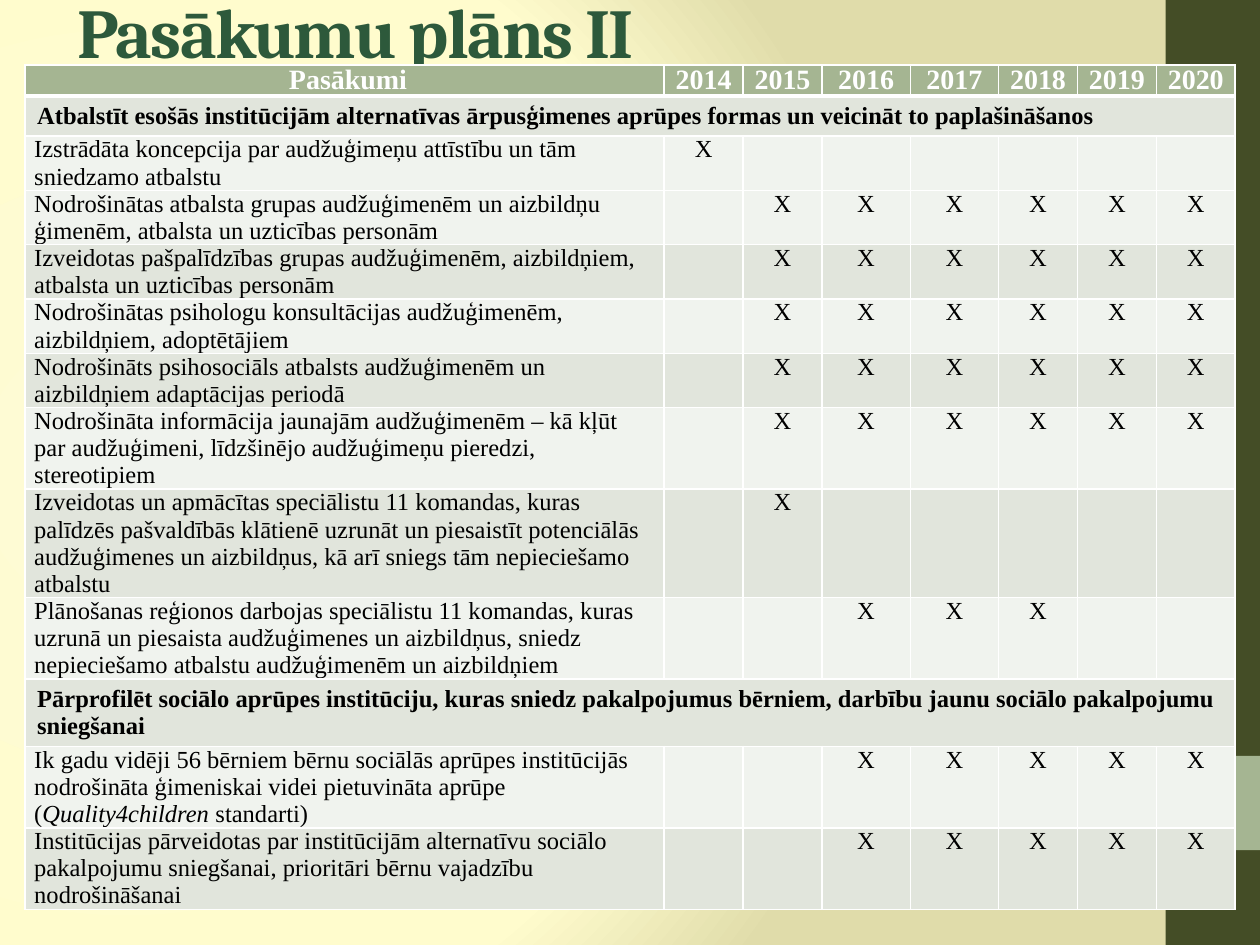
from dataclasses import dataclass

from pptx import Presentation
from pptx import util as u
from pptx.dml.color import RGBColor
from pptx.enum import shapes, text
from pptx.oxml import parse_xml
from pptx.oxml.ns import nsdecls


@dataclass(frozen=True)
class Theme:
    olive: str = "444D26"
    sage: str = "A5B592"
    title: str = "2D593B"
    band_dark: str = "E1E5DC"
    band_light: str = "F0F3EE"
    white: str = "FFFFFF"
    black: str = "000000"
    gradient: tuple = ((0, "FEFBD4"), (75, "FFFCCD"), (100, "E0DCAA"))
    title_font: str = "Cambria"
    table_font: str = "Times New Roman"
    title_size: int = 40
    header_size: int = 16
    body_size: int = 14
    line_pitch: float = 1.107  # line height as a share of the type size


@dataclass(frozen=True)
class Section:
    name: str
    lines: int = 1


@dataclass(frozen=True)
class Activity:
    name: str  # asterisks enclose italic words
    lines: int
    first_year: int
    last_year: int
    shaded: bool = False


THEME = Theme()
YEARS = range(2014, 2021)
COLUMN_WIDTHS = [12.89, 1.59, 1.59, 1.78, 1.78, 1.59, 1.59, 1.59]
LINE_HEIGHT = 0.545
HEADER_HEIGHT = 0.62
SECTION_MARGINS = (0.25, 0.13)
CELL_MARGINS = (0.19, 0)

PLAN = [
    Section("Atbalstīt esošās institūcijām alternatīvas ārpusģimenes aprūpes formas "
            "un veicināt to paplašināšanos"),
    Activity("Izstrādāta koncepcija par audžuģimeņu attīstību un tām sniedzamo atbalstu",
             2, 2014, 2014),
    Activity("Nodrošinātas atbalsta grupas audžuģimenēm un aizbildņu ģimenēm, "
             "atbalsta un uzticības personām", 2, 2015, 2020),
    Activity("Izveidotas pašpalīdzības grupas audžuģimenēm, aizbildņiem, "
             "atbalsta un uzticības personām", 2, 2015, 2020, True),
    Activity("Nodrošinātas psihologu konsultācijas audžuģimenēm, aizbildņiem, adoptētājiem",
             2, 2015, 2020),
    Activity("Nodrošināts psihosociāls atbalsts audžuģimenēm un aizbildņiem "
             "adaptācijas periodā", 2, 2015, 2020, True),
    Activity("Nodrošināta informācija jaunajām audžuģimenēm – kā kļūt par audžuģimeni, "
             "līdzšinējo audžuģimeņu pieredzi, stereotipiem", 3, 2015, 2020),
    Activity("Izveidotas un apmācītas speciālistu 11 komandas, kuras palīdzēs pašvaldībās "
             "klātienē uzrunāt un piesaistīt potenciālās audžuģimenes un aizbildņus, "
             "kā arī sniegs tām nepieciešamo atbalstu", 4, 2015, 2015, True),
    Activity("Plānošanas reģionos darbojas speciālistu 11 komandas, kuras uzrunā un "
             "piesaista audžuģimenes un aizbildņus, sniedz nepieciešamo atbalstu "
             "audžuģimenēm un aizbildņiem", 3, 2016, 2018),
    Section("Pārprofilēt sociālo aprūpes institūciju, kuras sniedz pakalpojumus bērniem, "
            "darbību jaunu sociālo pakalpojumu sniegšanai", 2),
    Activity("Ik gadu vidēji 56 bērniem bērnu sociālās aprūpes institūcijās nodrošināta "
             "ģimeniskai videi pietuvināta aprūpe (*Quality4children* standarti)",
             3, 2016, 2020),
    Activity("Institūcijas pārveidotas par institūcijām alternatīvu sociālo pakalpojumu "
             "sniegšanai, prioritāri bērnu vajadzību nodrošināšanai", 3, 2016, 2020, True),
]


def rgb(color: str) -> RGBColor:
    return RGBColor.from_string(color)


def set_background(slide) -> None:
    stops = "".join(f'<a:gs pos="{position * 1000}"><a:srgbClr val="{color}"/></a:gs>'
                    for position, color in THEME.gradient)
    slide.element.cSld.insert(0, parse_xml(
        f'<p:bg {nsdecls("p", "a")}><p:bgPr><a:gradFill rotWithShape="1">'
        f'<a:gsLst>{stops}</a:gsLst><a:path path="circle">'
        '<a:fillToRect l="20000" t="50000" r="100000" b="50000"/></a:path>'
        '</a:gradFill><a:effectLst/></p:bgPr></p:bg>'))


def add_band(slide, top: float, height: float, color: str) -> None:
    shape = slide.shapes.add_shape(shapes.MSO_SHAPE.RECTANGLE, u.Cm(23.5), u.Cm(top),
                                   u.Cm(1.9), u.Cm(height))
    shape.shadow.inherit = False
    shape.fill.solid()
    shape.fill.fore_color.rgb = rgb(color)
    shape.line.fill.background()


def style_font(font, name: str, size: int, color: str, bold: bool) -> None:
    font.name, font.size, font.bold = name, u.Pt(size), bold
    font.color.rgb = rgb(color)


def add_title(slide, title: str) -> None:
    box = slide.shapes.add_textbox(u.Cm(1.32), u.Cm(0.12), u.Cm(21.16), u.Cm(1))
    frame = box.text_frame
    frame.word_wrap = True
    frame.vertical_anchor = text.MSO_ANCHOR.MIDDLE
    paragraph = frame.paragraphs[0]
    run = paragraph.add_run()
    run.text = title
    style_font(paragraph.font, THEME.title_font, THEME.title_size, THEME.title, True)
    run.font._element.set("spc", "-100")


def set_borders(cell, top: int = 1, bottom: int = 1) -> None:
    properties = cell._tc.get_or_add_tcPr()
    widths = {"lnL": 1, "lnR": 1, "lnT": top, "lnB": bottom}
    for index, (side, width) in enumerate(widths.items()):
        properties.insert(index, parse_xml(
            f'<a:{side} {nsdecls("a")} w="{u.Pt(width)}"><a:solidFill>'
            f'<a:srgbClr val="{THEME.white}"/></a:solidFill></a:{side}>'))


def fill_cell(cell, words: str, fill: str, size: int = THEME.body_size,
              color: str = THEME.black, bold: bool = False, centred: bool = False,
              margins: tuple = CELL_MARGINS) -> None:
    cell.fill.solid()
    cell.fill.fore_color.rgb = rgb(fill)
    cell.margin_left = cell.margin_right = u.Cm(margins[0])
    cell.margin_top = cell.margin_bottom = u.Cm(margins[1])
    paragraph = cell.text_frame.paragraphs[0]
    style_font(paragraph.font, THEME.table_font, size, color, bold)
    paragraph.line_spacing = u.Pt(round(size * THEME.line_pitch, 1))
    if centred:
        paragraph.alignment = text.PP_ALIGN.CENTER
    for index, part in enumerate(words.split("*") if words else []):
        run = paragraph.add_run()
        run.text = part
        if index % 2:
            run.font.italic = True
    # The paragraph end takes the same size, so that it does not stretch the row
    paragraph._p.append(parse_xml(f'<a:endParaRPr {nsdecls("a")} sz="{size * 100}"/>'))


def add_plan_table(slide) -> None:
    heights = [HEADER_HEIGHT] + [
        row.lines * LINE_HEIGHT + (2 * SECTION_MARGINS[1] if isinstance(row, Section) else 0)
        for row in PLAN]
    table = slide.shapes.add_table(len(heights), len(COLUMN_WIDTHS), u.Cm(0.5), u.Cm(1.31),
                                   u.Cm(sum(COLUMN_WIDTHS)), u.Cm(sum(heights))).table
    for column, width in zip(table.columns, COLUMN_WIDTHS):
        column.width = u.Cm(width)
    for row, height in zip(table.rows, heights):
        row.height = u.Cm(height)

    # Header row
    for cell, label in zip(table.rows[0].cells, [" Pasākumi", *map(str, YEARS)]):
        fill_cell(cell, label, THEME.sage, THEME.header_size, THEME.white, True, True)
        set_borders(cell, bottom=3)

    # Sections span the table; activities mark their years
    for index, entry in enumerate(PLAN, start=1):
        cells = list(table.rows[index].cells)
        if isinstance(entry, Section):
            cells[0].merge(cells[-1])
            for cell in cells:
                fill_cell(cell, entry.name if cell is cells[0] else "", THEME.band_dark,
                          bold=True, margins=SECTION_MARGINS)
        else:
            fill = THEME.band_dark if entry.shaded else THEME.band_light
            fill_cell(cells[0], entry.name, fill)
            for cell, year in zip(cells[1:], YEARS):
                marked = entry.first_year <= year <= entry.last_year
                fill_cell(cell, "X" if marked else "", fill, centred=True)
        for cell in cells:
            set_borders(cell, top=3 if index == 1 else 1)


def main() -> None:
    presentation = Presentation()
    presentation.slide_width, presentation.slide_height = u.Cm(25.4), u.Cm(19.05)
    slide = presentation.slides.add_slide(presentation.slide_layouts[6])

    # Backdrop and side band
    set_background(slide)
    add_band(slide, 0, 19.05, THEME.olive)
    add_band(slide, 15.24, 1.9, THEME.sage)

    # Title and plan
    add_title(slide, "Pasākumu plāns II")
    add_plan_table(slide)
    presentation.save("out.pptx")


if __name__ == "__main__":
    main()
